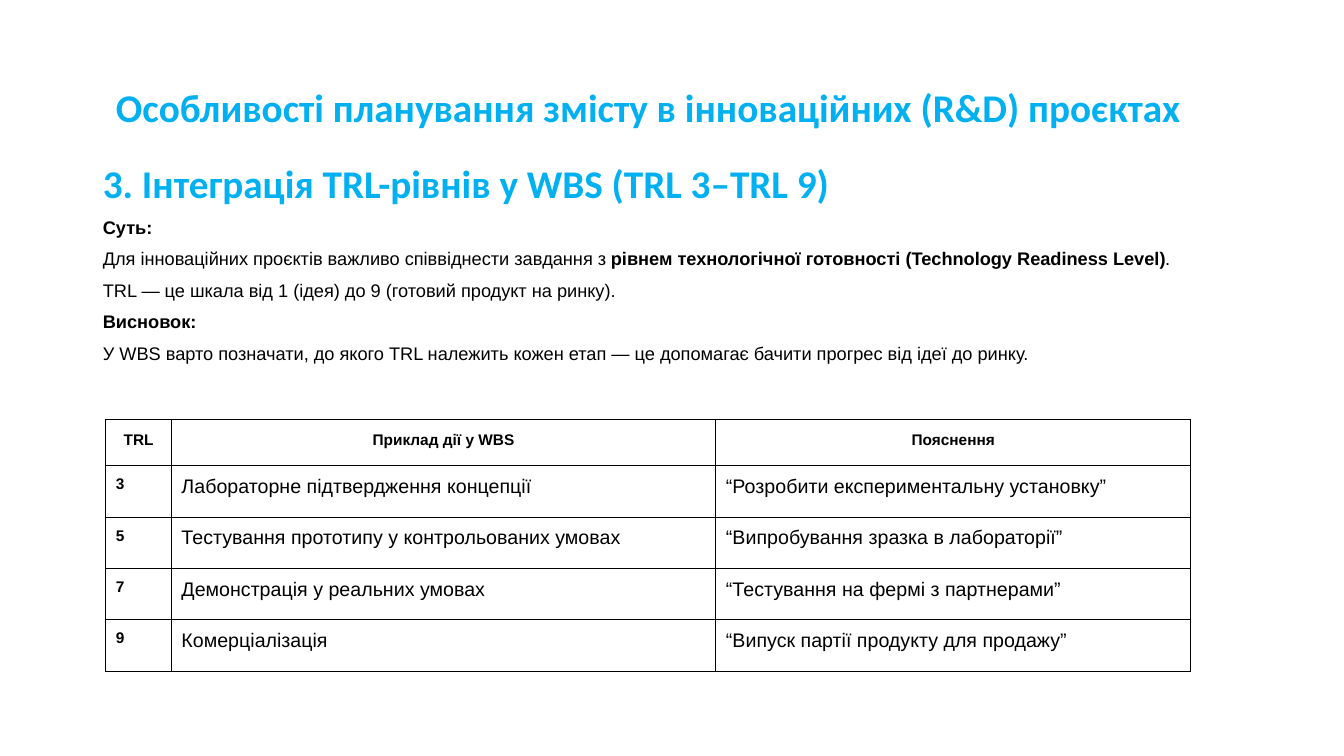
from lxml import etree
from pptx import Presentation
from pptx.dml.color import RGBColor
from pptx.enum.text import MSO_ANCHOR, MSO_AUTO_SIZE, PP_ALIGN
from pptx.oxml.ns import qn
from pptx.util import Inches, Pt

LEFT, CENTER = PP_ALIGN.LEFT, PP_ALIGN.CENTER
TOP, MIDDLE = MSO_ANCHOR.TOP, MSO_ANCHOR.MIDDLE
NO_FIT = MSO_AUTO_SIZE.NONE
BLUE, BLACK = "00B0F0", "000000"
HEAD = {"size": 28, "font": "Calibri", "color": BLUE, "bold": True}

TITLE = "Особливості планування змісту в інноваційних (R&D) проєктах"
TOPIC = "3. Інтеграція TRL-рівнів у WBS (TRL 3–TRL 9)"
# Each line is a list of (text, bold) runs.
LINES = [
    [("Суть:", True)],
    [("Для інноваційних проєктів важливо співвіднести завдання з ", False),
     ("рівнем технологічної готовності (Technology Readiness Level)", True),
     (".", False)],
    [("TRL — це шкала від 1 (ідея) до 9 (готовий продукт на ринку).", False)],
    [("Висновок:", True)],
    [("У WBS варто позначати, до якого TRL належить кожен етап — "
      "це допомагає бачити прогрес від ідеї до ринку.", False)],
]
ROWS = [
    ("TRL", "Приклад дії у WBS", "Пояснення"),
    ("3", "Лабораторне підтвердження концепції",
     "“Розробити експериментальну установку”"),
    ("5", "Тестування прототипу у контрольованих умовах",
     "“Випробування зразка в лабораторії”"),
    ("7", "Демонстрація у реальних умовах",
     "“Тестування на фермі з партнерами”"),
    ("9", "Комерціалізація", "“Випуск партії продукту для продажу”"),
]
WIDTHS = (0.65, 5.4, 4.71)
HEIGHTS = (0.46,) + (0.51,) * 4


def rgb(code):
    return RGBColor.from_string(code)


def write(par, text, size=13, font="Arial", color=BLACK, bold=False):
    """Add one formatted run to a paragraph."""
    run = par.add_run()
    run.text = text
    face = run.font
    face.size, face.name, face.bold = Pt(size), font, bold
    face.color.rgb = rgb(color)


def layout(par, align=LEFT, line=1.0, before=0):
    """Set alignment and spacing, with no bullet or indent."""
    par.alignment, par.line_spacing = align, line
    par.space_before = Pt(before)
    props = par._p.get_or_add_pPr()
    props.set("marL", "0")
    props.set("indent", "0")
    etree.SubElement(props, qn("a:buNone"))


def border(cell, color=BLACK, width=0.75):
    props = cell._tc.get_or_add_tcPr()
    for spot, side in enumerate(("a:lnL", "a:lnR", "a:lnT", "a:lnB")):
        line = etree.Element(qn(side), w=str(Pt(width)))
        fill = etree.SubElement(line, qn("a:solidFill"))
        etree.SubElement(fill, qn("a:srgbClr"), val=color)
        props.insert(spot, line)


class Deck:
    """Holds the presentation and its current slide."""

    def __init__(self):
        self.prs = Presentation()
        self.prs.slide_width = Inches(13.33)
        self.prs.slide_height = Inches(7.5)
        self.slide = self.prs.slides.add_slide(self.prs.slide_layouts[1])

    def place(self, index, box, anchor):
        """Move a placeholder and return its text frame."""
        shape = self.slide.placeholders[index]
        shape.left, shape.top, shape.width, shape.height = map(Inches, box)
        frame = shape.text_frame
        frame.word_wrap, frame.auto_size = True, NO_FIT
        frame.vertical_anchor = anchor
        return frame

    def title(self, text, box):
        par = self.place(0, box, MIDDLE).paragraphs[0]
        layout(par, line=0.9)
        write(par, text, **HEAD)

    def body(self, topic, lines, box):
        frame = self.place(1, box, TOP)
        par = frame.paragraphs[0]
        layout(par, line=0.8, before=10)
        write(par, topic, **HEAD)
        for runs in lines:
            par = frame.add_paragraph()
            layout(par, line=0.8, before=10)
            for text, bold in runs:
                write(par, text, bold=bold)

    def table(self, rows, left, top):
        frame = self.slide.shapes.add_table(
            len(rows), len(WIDTHS), Inches(left), Inches(top),
            Inches(sum(WIDTHS)), Inches(sum(HEIGHTS)))
        grid = frame.table
        for col, width in zip(grid.columns, WIDTHS):
            col.width = Inches(width)
        for row, height in zip(grid.rows, HEIGHTS):
            row.height = Inches(height)
        for r, texts in enumerate(rows):
            for c, text in enumerate(texts):
                self.cell(grid.cell(r, c), text, r == 0, c == 0)

    def cell(self, cell, text, head, key):
        cell.fill.background()
        border(cell)
        cell.margin_left = cell.margin_right = Inches(0.1)
        cell.margin_top = cell.margin_bottom = Inches(0.1)
        par = cell.text_frame.paragraphs[0]
        layout(par, CENTER if head else LEFT, 1.15 if head else 1.0)
        bold = head or key
        write(par, text, size=11 if bold else 14, bold=bold)


def main():
    deck = Deck()
    deck.title(TITLE, (1.05, 0.55, 11.5, 1.07))
    deck.body(TOPIC, LINES, (0.92, 1.62, 11.5, 2.28))
    deck.table(ROWS, 1.05, 4.16)
    deck.prs.save("out.pptx")


if __name__ == "__main__":
    main()
